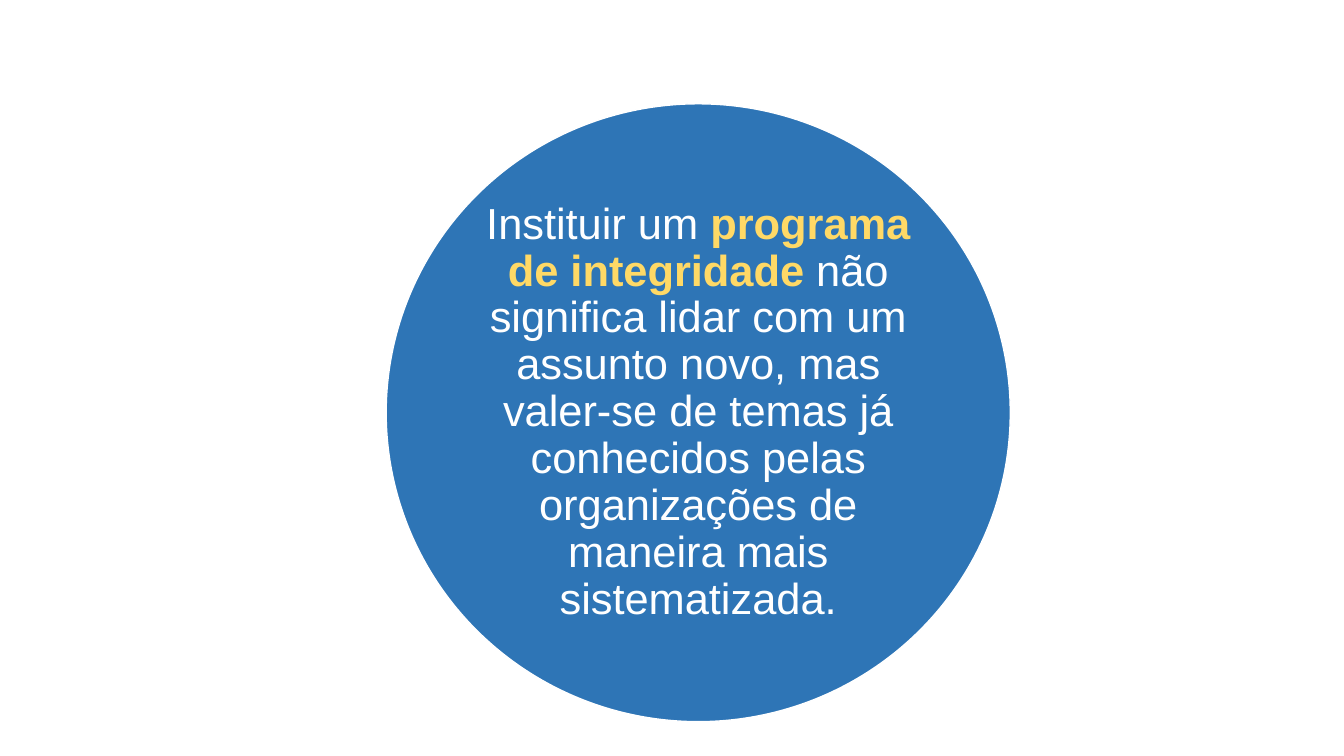
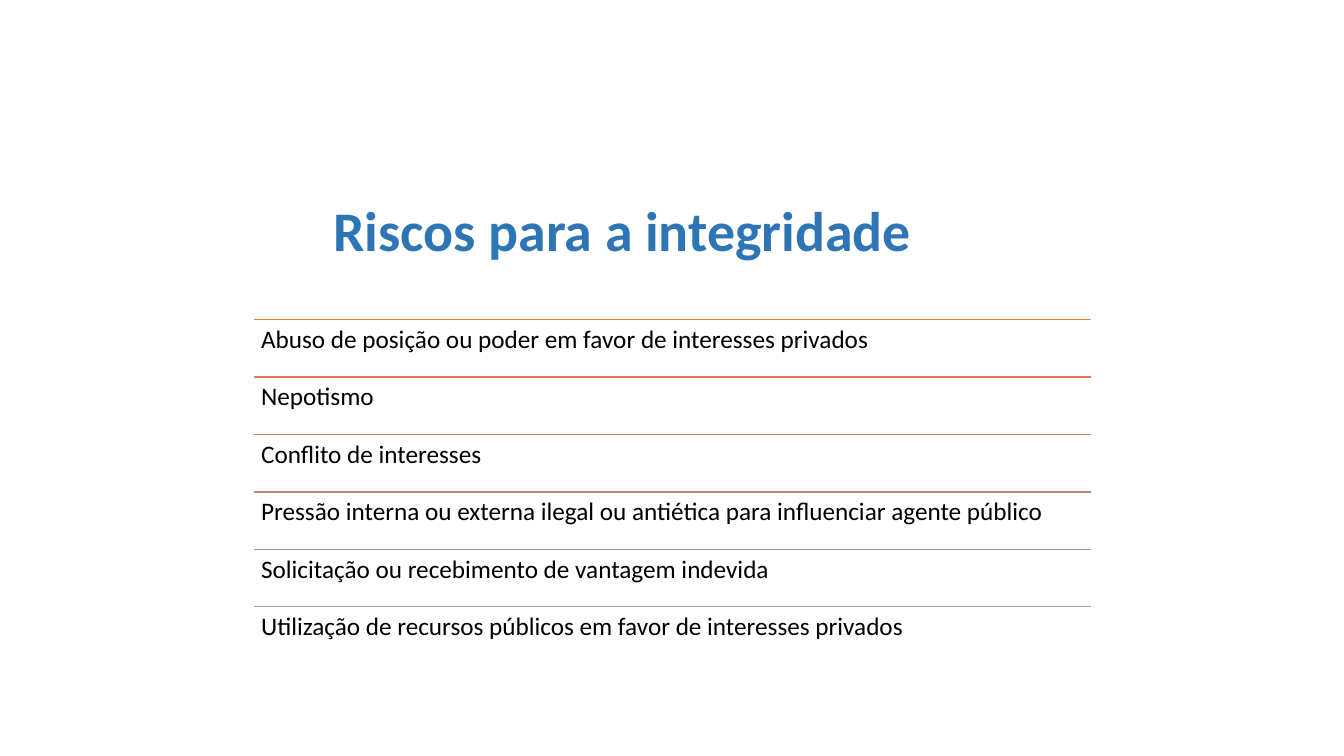
from dataclasses import dataclass

from lxml.etree import SubElement
from pptx import Presentation
from pptx.dml.color import RGBColor
from pptx.enum.shapes import MSO_CONNECTOR, MSO_SHAPE
from pptx.enum.text import MSO_ANCHOR, PP_ALIGN
from pptx.oxml.ns import qn
from pptx.util import Inches, Pt


@dataclass(frozen=True)
class Theme:
    blue: str = "2E75B6"
    yellow: str = "FFD966"
    white: str = "FFFFFF"
    black: str = "000000"
    rules: tuple = ("ED7D31", "DC7A4B", "CC7D64", "BD867B", "B09391", "A5A5A5")
    statement_font: str = "Arial"
    body_font: str = "Calibri"
    statement_size: float = 31
    title_size: float = 39.9
    item_size: float = 18
    line_width: float = 1


class Deck:
    """Holds the style and the slide being built."""

    def __init__(self, theme):
        self.theme = theme
        self.presentation = Presentation()
        self.presentation.slide_width = Inches(13.33)
        self.presentation.slide_height = Inches(7.5)
        self.slide = None

    def new_slide(self):
        blank = self.presentation.slide_layouts[6]
        self.slide = self.presentation.slides.add_slide(blank)

    def fill_text(self, frame, runs, font, size, inset, spacing=0.9, align=PP_ALIGN.LEFT):
        """Fill a frame with one paragraph of (text, colour, bold) runs."""
        frame.margin_left = frame.margin_right = Inches(inset)
        frame.margin_top = frame.margin_bottom = Inches(inset)
        paragraph = frame.paragraphs[0]
        paragraph.alignment = align
        paragraph.line_spacing = spacing
        for text, colour, bold in runs:
            run = paragraph.add_run()
            run.text = text
            run.font.name = font
            run.font.size = Pt(size)
            run.font.bold = bold
            run.font.color.rgb = RGBColor.from_string(colour)

    def text_box(self, left, top, width, height, wrap=True):
        box = self.slide.shapes.add_textbox(
            Inches(left), Inches(top), Inches(width), Inches(height))
        box.text_frame.word_wrap = wrap
        return box.text_frame

    def title(self, text, left, top, width, height):
        frame = self.text_box(left, top, width, height, wrap=False)
        self.fill_text(frame, [(text, self.theme.blue, True)], self.theme.body_font,
                       self.theme.title_size, 0.05, 1.5, PP_ALIGN.CENTER)

    def circle(self, runs, left, top, width, height):
        shape = self.slide.shapes.add_shape(
            MSO_SHAPE.OVAL, Inches(left), Inches(top), Inches(width), Inches(height))
        shape.shadow.inherit = False
        shape.fill.solid()
        shape.fill.fore_color.rgb = RGBColor.from_string(self.theme.blue)
        shape.line.color.rgb = RGBColor.from_string(self.theme.white)
        shape.line.width = Pt(self.theme.line_width)
        frame = shape.text_frame
        frame.word_wrap = True
        frame.vertical_anchor = MSO_ANCHOR.MIDDLE
        self.fill_text(frame, runs, self.theme.statement_font,
                       self.theme.statement_size, 0.04, align=PP_ALIGN.CENTER)

    def rule(self, left, top, width, colour):
        line = self.slide.shapes.add_connector(
            MSO_CONNECTOR.STRAIGHT, Inches(left), Inches(top),
            Inches(left + width), Inches(top))
        line.line.color.rgb = RGBColor.from_string(colour)
        line.line.width = Pt(self.theme.line_width)
        SubElement(line._element.spPr, qn("a:effectLst"))

    def ruled_list(self, items, left, top, width, row_height):
        for index, (item, colour) in enumerate(zip(items, self.theme.rules)):
            row_top = top + index * row_height
            self.rule(left, row_top, width, colour)
            frame = self.text_box(left, row_top, width, row_height)
            self.fill_text(frame, [(item, self.theme.black, False)],
                           self.theme.body_font, self.theme.item_size, 0.07)


def main():
    theme = Theme()
    deck = Deck(theme)

    # Statement in a circle
    deck.new_slide()
    deck.circle([
        ("Instituir um ", theme.white, False),
        ("programa de integridade ", theme.yellow, True),
        ("não significa lidar com um assunto novo, mas valer-se de temas já "
         "conhecidos pelas organizações de maneira mais sistematizada.",
         theme.white, False),
    ], 3.83, 1.03, 6.19, 6.13)

    # List of risks
    deck.new_slide()
    deck.ruled_list([
        "Abuso de posição ou poder em favor de interesses privados",
        "Nepotismo",
        "Conflito de interesses",
        "Pressão interna ou externa ilegal ou antiética para influenciar agente público",
        "Solicitação ou recebimento de vantagem indevida",
        "Utilização de recursos públicos em favor de interesses privados",
    ], 2.52, 3.17, 8.3, 0.57)
    deck.title("Riscos para a integridade", 3.18, 1.56, 5.99, 1)

    deck.presentation.save("out.pptx")


if __name__ == "__main__":
    main()
